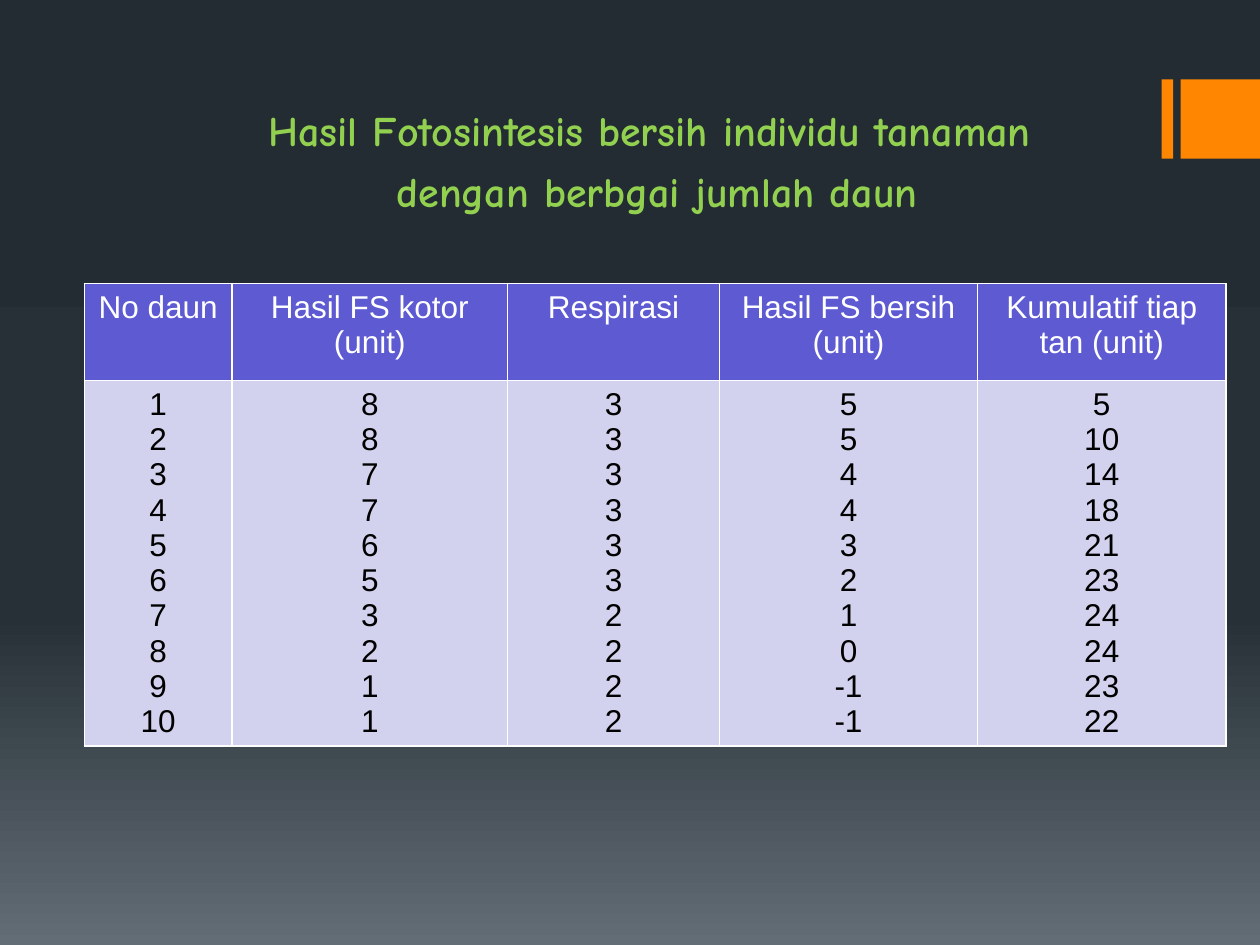
"""Build the slide on net photosynthesis by number of leaves."""
import copy

import pptx
import pptx.dml.color
import pptx.enum.shapes
import pptx.enum.text
import pptx.oxml.ns
import pptx.util
from lxml import etree

Inches = pptx.util.Inches
Pt = pptx.util.Pt
qn = pptx.oxml.ns.qn


def rgb(value):
    return pptx.dml.color.RGBColor.from_string(value)


class Deck:
    title_font, table_font = "Comic Neue", "Arial"
    green, orange, white, black = "92D050", "FF8600", "FFFFFF", "000000"
    header_fill, body_fill = "5D5AD2", "D2D2EE"
    center = pptx.enum.text.PP_ALIGN.CENTER

    def __init__(self, prs):
        self.s = prs.slides.add_slide(prs.slide_layouts[5])

    def background(self, stops):
        fill = self.s.background.fill
        fill.gradient()
        fill.gradient_angle = 270
        gs_list = self.s._element.find(".//" + qn("a:gsLst"))
        while len(gs_list) < len(stops):
            gs_list.append(copy.deepcopy(gs_list[0]))
        for stop, (position, color) in zip(fill.gradient_stops, stops):
            stop.position = position
            stop.color.rgb = rgb(color)

    def paragraph(self, p, font, size, color, bold=False):
        p.alignment = self.center
        for r in p.runs:
            r.font.name, r.font.size, r.font.bold = font, Pt(size), bold
            r.font.color.rgb = rgb(color)

    def title(self, text, x, y, w, h):
        sp = self.s.shapes.title
        sp.left, sp.top, sp.width, sp.height = map(Inches, (x, y, w, h))
        tf = sp.text_frame
        tf.text = text
        tf.word_wrap = True
        tf.auto_size = pptx.enum.text.MSO_AUTO_SIZE.NONE
        tf.vertical_anchor = pptx.enum.text.MSO_ANCHOR.TOP
        for p in tf.paragraphs:
            self.paragraph(p, self.title_font, 24, self.green, True)
            p.space_before = Pt(5.8)

    def rectangle(self, x, y, w, h):
        shape_type = pptx.enum.shapes.MSO_SHAPE.RECTANGLE
        sp = self.s.shapes.add_shape(shape_type, *map(Inches, (x, y, w, h)))
        sp.shadow.inherit = False
        sp.fill.solid()
        sp.fill.fore_color.rgb = rgb(self.orange)
        sp.line.fill.background()

    def borders(self, cell):
        tc_pr = cell._tc.get_or_add_tcPr()
        for side in ("a:lnL", "a:lnR", "a:lnT", "a:lnB"):
            ln = etree.SubElement(tc_pr, qn(side), w=str(Pt(1)))
            fill = etree.SubElement(ln, qn("a:solidFill"))
            etree.SubElement(fill, qn("a:srgbClr"), val=self.white)

    def cell(self, cell, text, fill, color):
        self.borders(cell)
        cell.fill.solid()
        cell.fill.fore_color.rgb = rgb(fill)
        cell.text_frame.text = text
        for p in cell.text_frame.paragraphs:
            self.paragraph(p, self.table_font, 18, color)

    def table(self, columns, x, y, widths, heights):
        size = map(Inches, (x, y, sum(widths), sum(heights)))
        table = self.s.shapes.add_table(2, len(columns), *size).table
        for row, height in zip(table.rows, heights):
            row.height = Inches(height)
        for i, (header, values) in enumerate(columns.items()):
            table.columns[i].width = Inches(widths[i])
            self.cell(table.cell(0, i), header, self.header_fill, self.white)
            body = "\n".join(map(str, values))
            self.cell(table.cell(1, i), body, self.body_fill, self.black)


def main():
    prs = pptx.Presentation()
    prs.slide_width, prs.slide_height = Inches(10), Inches(7.5)
    deck = Deck(prs)
    deck.background([(0, "242C33"), (0.65, "273037"), (1, "636D76")])
    deck.rectangle(9.22, 0.63, 0.09, 0.63)
    deck.rectangle(9.37, 0.63, 0.63, 0.63)
    deck.title("Hasil Fotosintesis bersih individu tanaman \n"
               "dengan berbgai jumlah daun", 0.41, 0.78, 9.61, 1.2)
    gross = [8, 8, 7, 7, 6, 5, 3, 2, 1, 1]
    respiration = [3] * 6 + [2] * 4
    net = [g - r for g, r in zip(gross, respiration)]
    columns = {
        "No daun": range(1, 11),
        "Hasil FS kotor (unit)": gross,
        "Respirasi": respiration,
        "Hasil FS bersih (unit)": net,
        "Kumulatif tiap tan (unit)": [sum(net[:n]) for n in range(1, 11)],
    }
    deck.table(columns, 0.67, 2.25, [1.17, 2.19, 1.68, 2.05, 1.97], [0.77, 2.9])
    prs.save("out.pptx")


if __name__ == "__main__":
    main()
